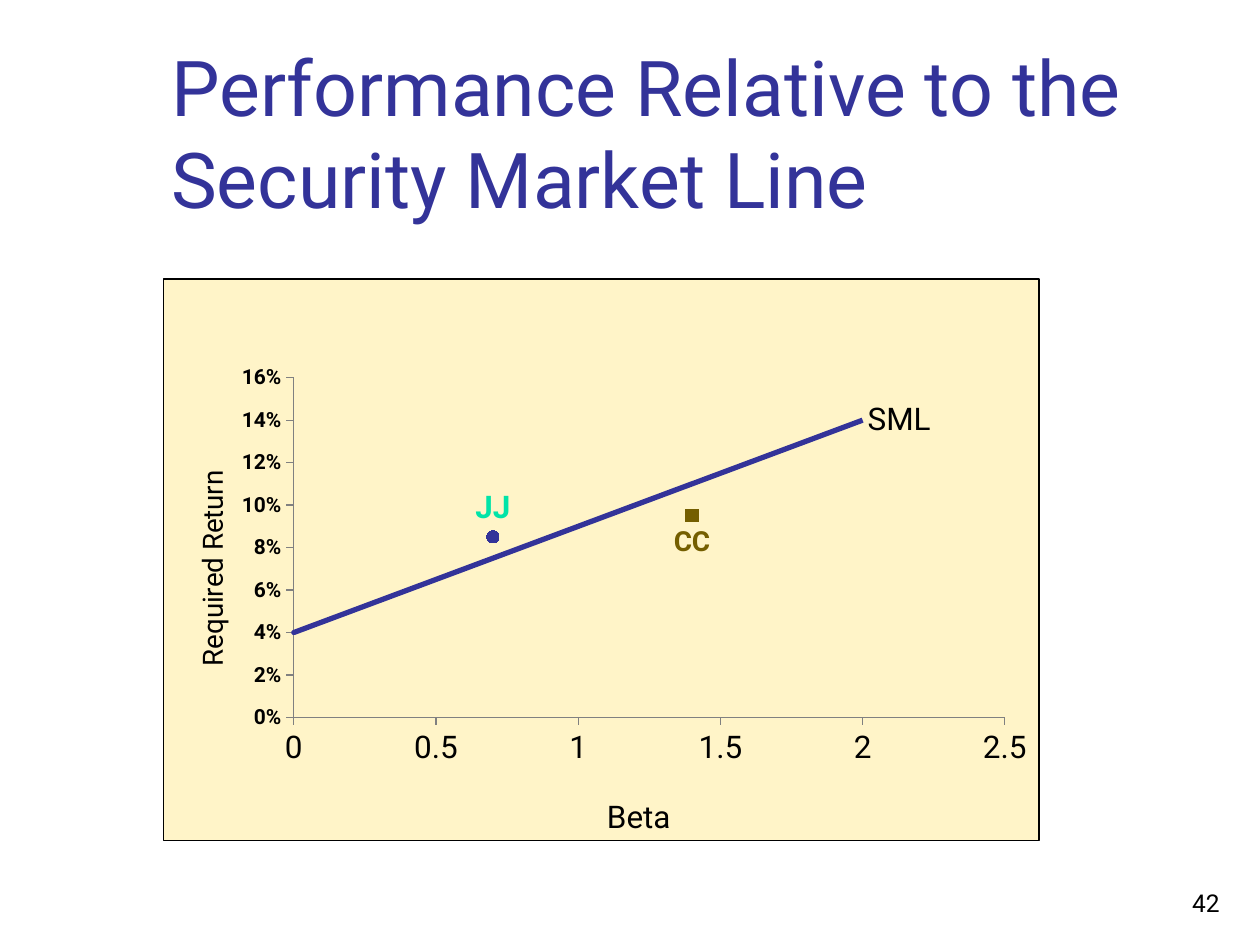
from lxml.etree import SubElement
from pptx import Presentation
from pptx.chart.data import XyChartData
from pptx.dml.color import RGBColor
from pptx.enum.chart import (XL_CHART_TYPE, XL_LABEL_POSITION,
                             XL_MARKER_STYLE, XL_TICK_MARK)
from pptx.enum.text import MSO_ANCHOR, PP_ALIGN
from pptx.oxml import parse_xml
from pptx.oxml.ns import nsdecls, qn
from pptx.util import Cm, Pt

FONT = "Roboto"
BLUE, GREEN, BROWN, BLACK, CREAM = "333399", "00E4A8", "745E00", "000000", "FFF4C8"

# Beta and return of each point, with the point that carries the series name
SERIES = {
    "SML": dict(points=[(0.7, 0.075), (1.4, 0.11), (0, 0.04), (2, 0.14)],
                color=BLUE, marker=XL_MARKER_STYLE.NONE, labelled=3,
                position=XL_LABEL_POSITION.RIGHT,
                font=dict(size=Pt(18), bold=False), label_color=BLACK),
    "JJ": dict(points=[(0.7, 0.085)], color=BLUE,
               marker=XL_MARKER_STYLE.CIRCLE, labelled=0,
               position=XL_LABEL_POSITION.ABOVE,
               font=dict(size=Pt(18), bold=True), label_color=GREEN),
    "CC": dict(points=[(1.4, 0.095)], color=BROWN,
               marker=XL_MARKER_STYLE.SQUARE, labelled=0,
               position=XL_LABEL_POSITION.BELOW,
               font=dict(size=Pt(16), bold=True), label_color=BROWN),
}


def rgb(value):
    return RGBColor.from_string(value)


def set_values(target, values):
    for name, value in values.items():
        setattr(target, name, value)


def set_font(font, color, values):
    set_values(font, dict(name=FONT, **values))
    font.color.rgb = rgb(color)


def write_text(shape, text, size, color, alignment):
    frame = shape.text_frame
    set_values(frame, dict(word_wrap=True, vertical_anchor=MSO_ANCHOR.BOTTOM))
    paragraph = frame.paragraphs[0]
    paragraph.alignment = alignment
    run = paragraph.add_run()
    run.text = text
    set_font(run.font, color, dict(size=Pt(size), bold=False))


def set_layout(element, **fractions):
    """Place a chart part by fractions of the chart area."""
    layout = element.find(qn("c:layout"))
    if layout is None:
        layout = parse_xml(f"<c:layout {nsdecls('c')}/>")
        text = element.find(qn("c:tx"))
        if text is None:
            element.insert(0, layout)
        else:
            text.addnext(layout)
    for child in list(layout):
        layout.remove(child)
    manual = SubElement(layout, qn("c:manualLayout"))
    if "w" in fractions:
        SubElement(manual, qn("c:layoutTarget")).set("val", "inner")
    for mode in ("xMode", "yMode"):
        SubElement(manual, qn(f"c:{mode}")).set("val", "edge")
    for name, value in fractions.items():
        SubElement(manual, qn(f"c:{name}")).set("val", str(value))


def format_axis(axis, title, title_size, tick_font, limits, x, y):
    set_values(axis, dict(has_major_gridlines=False, has_title=True,
                          major_tick_mark=XL_TICK_MARK.OUTSIDE,
                          minor_tick_mark=XL_TICK_MARK.NONE, **limits))
    axis.format.line.color.rgb = rgb("808080")
    set_font(axis.tick_labels.font, BLACK, tick_font)
    paragraph = axis.axis_title.text_frame.paragraphs[0]
    run = paragraph.add_run()
    run.text = title
    set_font(run.font, BLACK, dict(size=Pt(title_size), bold=False))
    set_layout(axis.axis_title._element, x=x, y=y)


def format_series(series, style):
    series.smooth = False
    line = series.format.line
    line.color.rgb = rgb(style["color"])
    line.width = Pt(3)
    set_values(series.marker, dict(style=style["marker"], size=7))
    if style["marker"] != XL_MARKER_STYLE.NONE:
        fill = series.marker.format.fill
        fill.solid()
        fill.fore_color.rgb = rgb(style["color"])
        series.marker.format.line.fill.background()

    # Label with the series name
    label = series.points[style["labelled"]].data_label
    set_font(label.font, style["label_color"], style["font"])
    label.position = style["position"]
    for element in series._element.iter(qn("c:dLbl")):
        element.find(qn("c:showVal")).set("val", "0")
        element.find(qn("c:showSerName")).set("val", "1")


def fill_chart_area(chart, fill, border):
    chart._chartSpace.find(qn("c:chart")).addnext(parse_xml(
        f'<c:spPr {nsdecls("c", "a")}>'
        f'<a:solidFill><a:srgbClr val="{fill}"/></a:solidFill>'
        f'<a:ln w="{Pt(0.75)}"><a:solidFill><a:srgbClr val="{border}"/>'
        '</a:solidFill></a:ln></c:spPr>'))


def add_market_line_chart(slide):
    data = XyChartData()
    for name, style in SERIES.items():
        series = data.add_series(name)
        for beta, required_return in style["points"]:
            series.add_data_point(beta, required_return)
    chart = slide.shapes.add_chart(
        XL_CHART_TYPE.XY_SCATTER_LINES_NO_MARKERS,
        Cm(3.28), Cm(5.61), Cm(17.68), Cm(11.43), data).chart
    set_values(chart, dict(has_title=False, has_legend=False))
    set_font(chart.font, BLACK, dict(size=Pt(18)))
    fill_chart_area(chart, CREAM, BLACK)
    plot = chart.plots[0]
    plot.vary_by_categories = False
    set_layout(chart._chartSpace.find(f".//{qn('c:plotArea')}"),
               x=0.149, y=0.176, w=0.812, h=0.605)

    # Axes
    format_axis(chart.category_axis, "Beta", 18, dict(size=Pt(18), bold=False),
                dict(minimum_scale=0, maximum_scale=2.5, major_unit=0.5), 0.5, 0.91)
    format_axis(chart.value_axis, "Required Return", 16, dict(size=Pt(12), bold=True),
                dict(minimum_scale=0, maximum_scale=0.16, major_unit=0.02), 0.03, 0.335)
    set_values(chart.value_axis.tick_labels,
               dict(number_format="0%", number_format_is_linked=False))

    for series in plot.series:
        format_series(series, SERIES[series.name])


def main():
    presentation = Presentation()
    set_values(presentation, dict(slide_width=Cm(25.4), slide_height=Cm(19.05)))
    slide = presentation.slides.add_slide(presentation.slide_layouts[5])

    # Title
    title = slide.shapes.title
    set_values(title, dict(left=Cm(3.2), top=Cm(0.58), width=Cm(21.64), height=Cm(4.06)))
    write_text(title, "Performance Relative to the Security Market Line",
               44, BLUE, PP_ALIGN.LEFT)

    add_market_line_chart(slide)

    # Page number
    number = slide.shapes.add_textbox(Cm(19.56), Cm(17.35), Cm(5.28), Cm(1.27))
    write_text(number, "42", 14, BLACK, PP_ALIGN.RIGHT)

    presentation.save("out.pptx")


if __name__ == "__main__":
    main()
